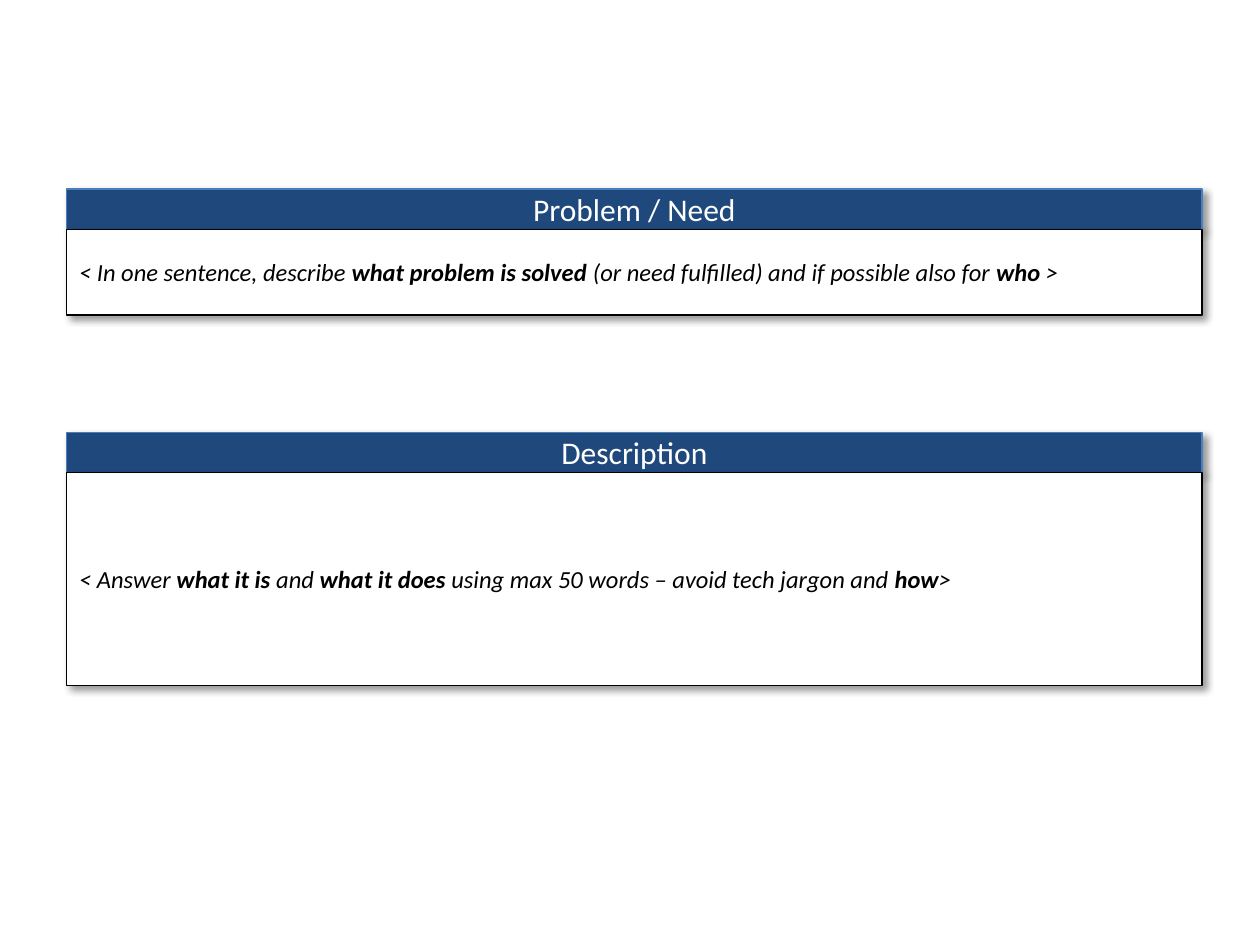
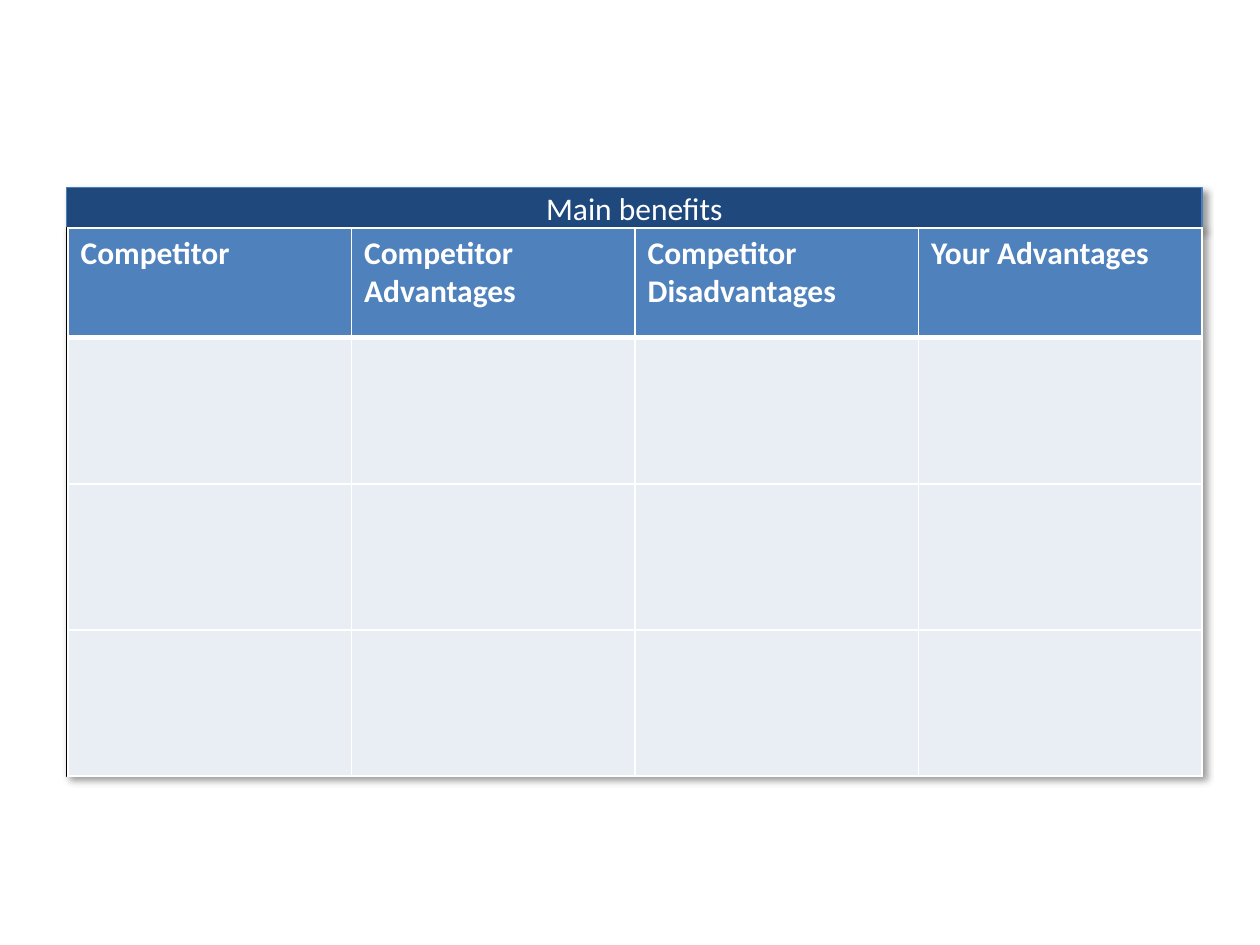
"""Build two pitch slides: problem and description, then a competitor table."""
from lxml.etree import SubElement
from pptx import Presentation
from pptx.dml.color import RGBColor
from pptx.enum.shapes import MSO_SHAPE
from pptx.enum.text import MSO_ANCHOR, PP_ALIGN
from pptx.oxml.ns import qn
from pptx.util import Pt

PX = 9144
NAVY = RGBColor(0x1F, 0x49, 0x7D)
EDGE_BLUE = RGBColor(0x4B, 0x7E, 0xBC)
HEADER_BLUE = RGBColor(0x4F, 0x81, 0xBD)
PALE_BLUE = RGBColor(0xE9, 0xED, 0xF4)
WHITE = RGBColor(0xFF, 0xFF, 0xFF)
BLACK = RGBColor(0x00, 0x00, 0x00)

LEFT, WIDTH, BAND_HEIGHT = 53, 901, 32


class PitchDeck:
    font = "Calibri"
    heading_size = 18
    body_size = 14

    def __init__(self):
        self.deck = Presentation()
        self.deck.slide_width = 1000 * PX
        self.deck.slide_height = 750 * PX
        self.page = None

    def add_page(self):
        self.page = self.deck.slides.add_slide(self.deck.slide_layouts[6])

    def style(self, paragraph, size, colour):
        paragraph.font.name = self.font
        paragraph.font.size = Pt(size)
        paragraph.font.color.rgb = colour

    def box(self, top, height, fill, edge):
        box = self.page.shapes.add_shape(
            MSO_SHAPE.RECTANGLE, LEFT * PX, top * PX, WIDTH * PX, height * PX)
        box.fill.solid()
        box.fill.fore_color.rgb = fill
        box.line.color.rgb = edge
        box.line.width = Pt(0.75)
        box.text_frame.word_wrap = True
        box.text_frame.vertical_anchor = MSO_ANCHOR.MIDDLE
        self.drop_shadow(box)
        return box

    def drop_shadow(self, box):
        box.shadow.inherit = False
        effects = box.element.spPr.find(qn("a:effectLst"))
        shadow = SubElement(effects, qn("a:outerShdw"), blurRad=str(Pt(4)),
                            dist=str(Pt(3)), dir=str(45 * 60000),
                            rotWithShape="0")
        colour = SubElement(shadow, qn("a:srgbClr"), val=str(BLACK))
        SubElement(colour, qn("a:alpha"), val="40000")

    def panel(self, top, height, heading, spans=()):
        """Draw a heading band over a white body; every second span is bold."""
        band = self.box(top, BAND_HEIGHT, NAVY, EDGE_BLUE)
        para = band.text_frame.paragraphs[0]
        para.text = heading
        para.alignment = PP_ALIGN.CENTER
        self.style(para, self.heading_size, WHITE)

        body = self.box(top + BAND_HEIGHT, height, WHITE, BLACK)
        para = body.text_frame.paragraphs[0]
        para.alignment = PP_ALIGN.LEFT
        self.style(para, self.body_size, BLACK)
        para.font.italic = True
        for index, words in enumerate(spans):
            span = para.add_run()
            span.text = words
            span.font.bold = index % 2 == 1

    def table(self, left, top, column_width, row_heights, headings):
        table = self.page.shapes.add_table(
            len(row_heights), len(headings), left * PX, top * PX,
            column_width * len(headings) * PX, sum(row_heights) * PX).table
        for column in table.columns:
            column.width = column_width * PX
        for index, (row, height) in enumerate(zip(table.rows, row_heights)):
            row.height = height * PX
            for cell in row.cells:
                cell.fill.solid()
                cell.fill.fore_color.rgb = PALE_BLUE if index else HEADER_BLUE
                self.borders(cell, top=3 if index == 1 else 1,
                             bottom=1 if index else 3)
        for cell, heading in zip(table.rows[0].cells, headings):
            para = cell.text_frame.paragraphs[0]
            para.text = heading
            self.style(para, self.heading_size, WHITE)
            para.font.bold = True

    def borders(self, cell, top, bottom):
        properties = cell._tc.get_or_add_tcPr()
        sides = (("L", 1), ("R", 1), ("T", top), ("B", bottom))
        for position, (side, width) in enumerate(sides):
            line = SubElement(properties, qn(f"a:ln{side}"), w=str(Pt(width)))
            fill = SubElement(line, qn("a:solidFill"))
            SubElement(fill, qn("a:srgbClr"), val=str(WHITE))
            properties.insert(position, line)


def main():
    pitch = PitchDeck()

    pitch.add_page()
    pitch.panel(150, 68, "Problem / Need", (
        "< In one sentence, describe ", "what problem is solved",
        " (or need fulfilled) and if possible also for ", "who", " >"))
    pitch.panel(343, 169, "Description", (
        "< Answer ", "what it is", " and ", "what it does",
        " using max 50 words – avoid tech jargon and ", "how", ">"))

    pitch.add_page()
    pitch.panel(149, 435, "Main benefits")
    pitch.table(54, 181, 225, (87, 116, 116, 116), (
        "Competitor", "Competitor\vAdvantages",
        "Competitor\vDisadvantages", "Your Advantages"))

    pitch.deck.save("out.pptx")


if __name__ == "__main__":
    main()
